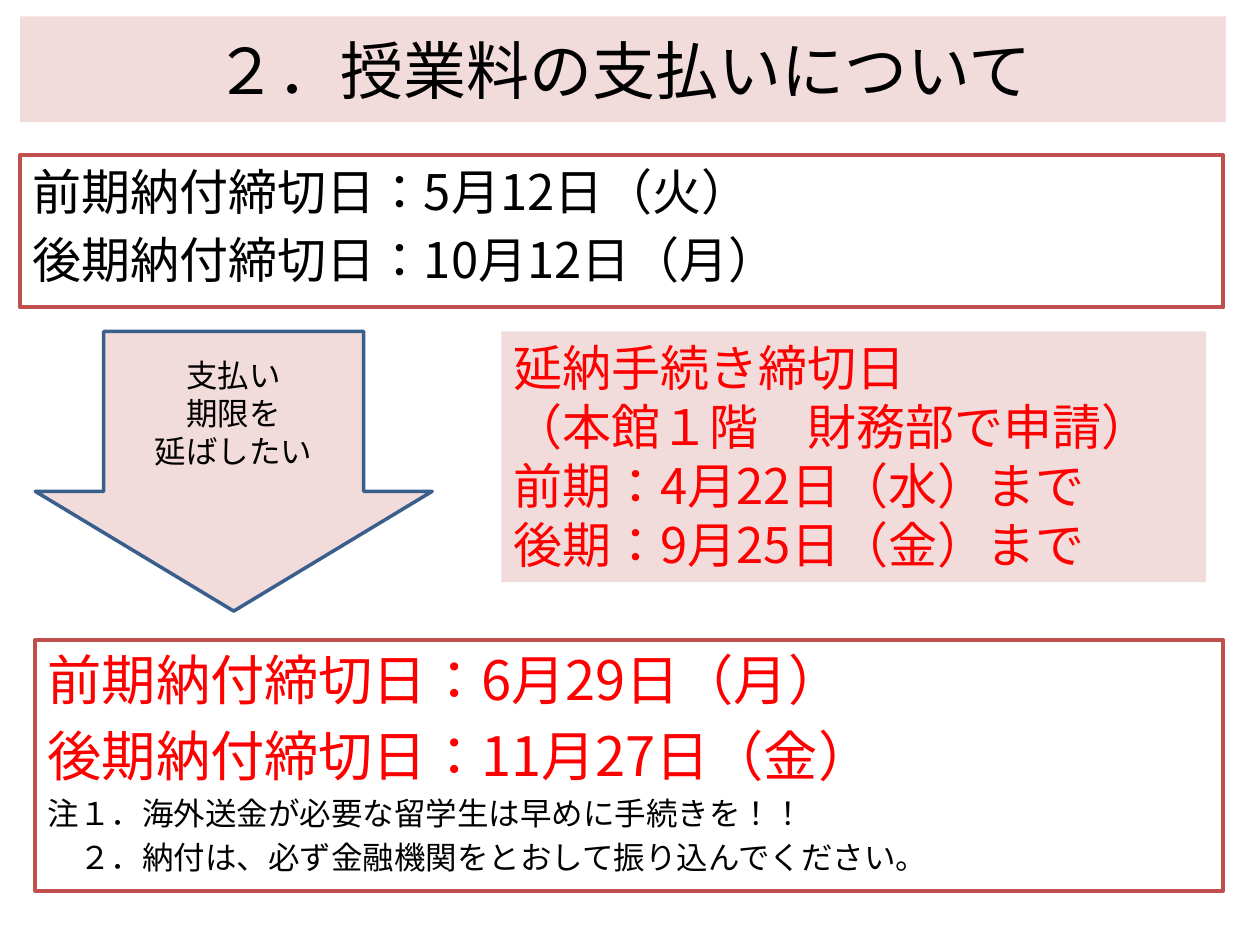
from lxml import etree
from pptx import Presentation
from pptx.dml.color import RGBColor
from pptx.enum import lang, shapes, text
from pptx.oxml.ns import qn
from pptx.util import Inches, Pt

JAPANESE_FONT = "Noto Sans CJK JP"
PINK, BRICK, NAVY = "F2DCDB", "C0504D", "3A5F8C"
BLACK, RED = "000000", "FF0000"


def color(value):
    return RGBColor.from_string(value)


def add_block(kind, box, lines, fill=None, line=None, latin=JAPANESE_FONT,
              align=text.PP_ALIGN.LEFT, anchor=text.MSO_ANCHOR.TOP, gap=0):
    """Add a shape; lines holds (wording, size, colour), gap is a share of the size."""
    shape = slide.shapes.add_shape(kind, *[Inches(value) for value in box])
    shape.shadow.inherit = False
    if fill:
        shape.fill.solid()
        shape.fill.fore_color.rgb = color(fill)
    else:
        shape.fill.background()
    if line:
        shape.line.color.rgb = color(line[0])
        shape.line.width = Pt(line[1])
    else:
        shape.line.fill.background()

    frame = shape.text_frame
    frame.word_wrap = True
    frame.vertical_anchor = anchor
    for index, (wording, size, font_color) in enumerate(lines):
        paragraph = frame.add_paragraph() if index else frame.paragraphs[0]
        paragraph.alignment = align
        paragraph.space_before = Pt(gap * size)
        run = paragraph.add_run()
        run.text = wording
        run.font.size = Pt(size)
        run.font.color.rgb = color(font_color)
        run.font.name = latin
        run.font.language_id = lang.MSO_LANGUAGE_ID.JAPANESE
        east_asian = etree.SubElement(run.font._element, qn("a:ea"))
        east_asian.set("typeface", JAPANESE_FONT)
    return shape


presentation = Presentation()
presentation.slide_width = Inches(10)
presentation.slide_height = Inches(7.5)
slide = presentation.slides.add_slide(presentation.slide_layouts[6])

rectangle = shapes.MSO_SHAPE.RECTANGLE
centered = {"align": text.PP_ALIGN.CENTER, "anchor": text.MSO_ANCHOR.MIDDLE}

# Title band
add_block(rectangle, (0.16, 0.13, 9.57, 0.84),
          [("２．授業料の支払いについて", 36, BLACK)], fill=PINK, **centered)

# Regular deadlines
add_block(rectangle, (0.16, 1.23, 9.55, 1.21),
          [("前期納付締切日：5月12日（火）", 28, BLACK),
           ("後期納付締切日：10月12日（月）", 28, BLACK)],
          line=(BRICK, 2.25), gap=0.2)

# Arrow towards the extended deadlines
arrow = add_block(shapes.MSO_SHAPE.DOWN_ARROW, (0.28, 2.63, 3.15, 2.22),
                  [(wording, 18, BLACK) for wording in ("支払い", "期限を", "延ばしたい")],
                  fill=PINK, line=(NAVY, 2), latin="Calibri", **centered)
arrow.adjustments[0] = 0.655
arrow.adjustments[1] = 0.428
arrow.text_frame.margin_bottom = Inches(0.35)

# How to apply for an extension
application = ("延納手続き締切日", "（本館１階　財務部で申請）",
               "前期：4月22日（水）まで　", "後期：9月25日（金）まで")
add_block(rectangle, (3.98, 2.63, 5.59, 1.99),
          [(wording, 28, RED) for wording in application], fill=PINK)

# Extended deadlines and notes
add_block(rectangle, (0.28, 5.08, 9.43, 1.99),
          [("前期納付締切日：6月29日（月）", 31, RED),
           ("後期納付締切日：11月27日（金）", 31, RED),
           ("注１．海外送金が必要な留学生は早めに手続きを！！", 18, BLACK),
           ("　２．納付は、必ず金融機関をとおして振り込んでください。", 18, BLACK)],
          line=(BRICK, 2.25), gap=0.2)

presentation.save("out.pptx")
